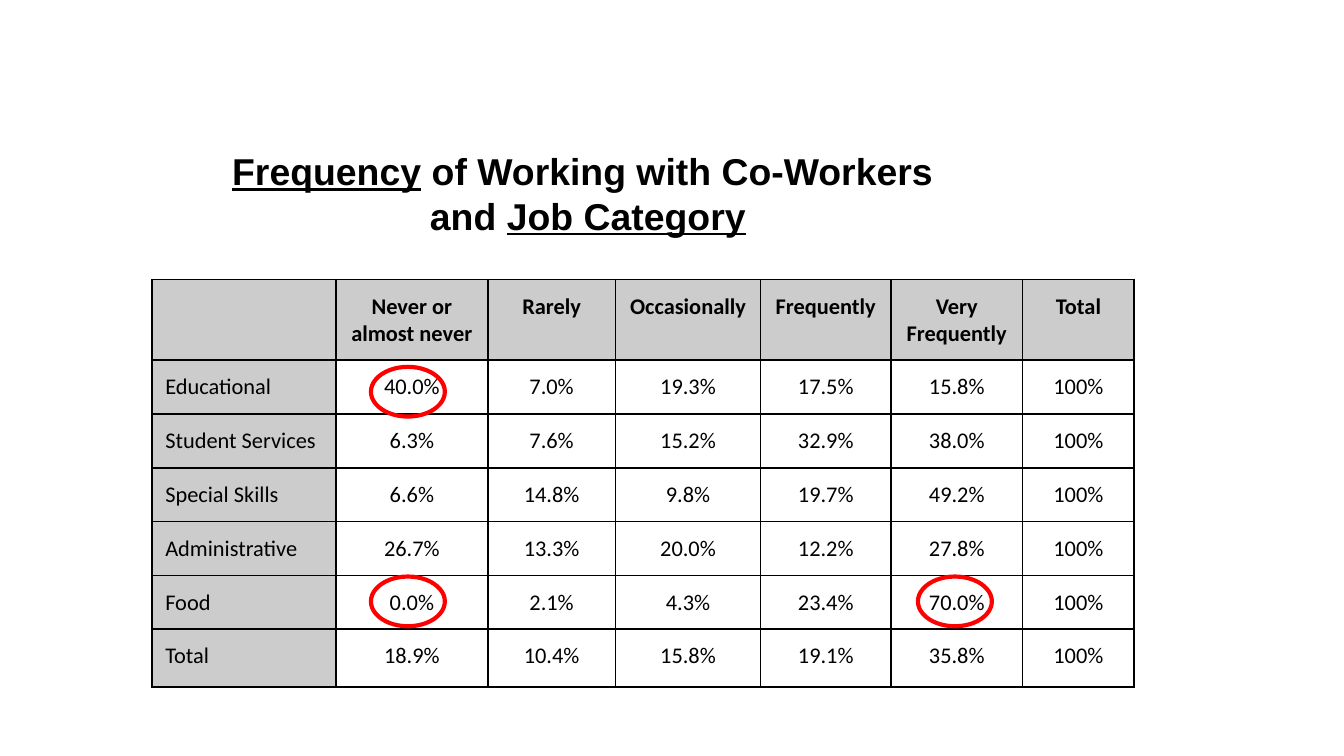
import pptx
import pptx.util
import pptx.dml.color
import pptx.enum.shapes
import pptx.enum.text
import pptx.oxml
import pptx.oxml.ns

Inches, Pt = pptx.util.Inches, pptx.util.Pt
ALIGN = pptx.enum.text.PP_ALIGN
ANCHOR = pptx.enum.text.MSO_ANCHOR

TITLE = [
    [("Frequency", True), (" of Working with Co-Workers ", False)],
    [("and ", False), ("Job Category", True)],
]
HEADS = ["", "Never or almost never", "Rarely", "Occasionally ",
         "Frequently", "Very Frequently", "Total"]
ROWS = [
    ["Educational", "40.0%", "7.0%", "19.3%", "17.5%", "15.8%", "100%"],
    ["Student Services", "6.3%", "7.6%", "15.2%", "32.9%", "38.0%", "100%"],
    ["Special Skills", "6.6%", "14.8%", "9.8%", "19.7%", "49.2%", "100%"],
    ["Administrative", "26.7%", "13.3%", "20.0%", "12.2%", "27.8%", "100%"],
    ["Food", "0.0%", "2.1%", "4.3%", "23.4%", "70.0%", "100%"],
    ["Total", "18.9%", "10.4%", "15.8%", "19.1%", "35.8%", "100%"],
]
WIDTHS = [1.37, 1.13, 0.95, 1.08, 0.97, 0.98, 0.83]
HEIGHTS = [0.6, 0.37, 0.36, 0.37, 0.39, 0.25, 0.43]
LEFT, TOP = 1.13, 2.08
RINGS = [(2.76, 2.73), (2.76, 4.29), (6.83, 4.29)]
RING = (0.55, 0.37)
BLACK, GRAY, RED = "000000", "CCCCCC", "FF0000"


def color(code):
    return pptx.dml.color.RGBColor.from_string(code)


def style(font, name, size, bold):
    font.name, font.size, font.bold = name, Pt(size), bold
    font.color.rgb = color(BLACK)


def add_title(slide):
    box = slide.shapes.add_textbox(
        Inches(-0.39), Inches(1.25), Inches(9.53), Inches(0.37))
    frame = box.text_frame
    frame.word_wrap = True
    frame.vertical_anchor = ANCHOR.MIDDLE
    para = frame.paragraphs[0]
    para.alignment = ALIGN.CENTER
    for n, line in enumerate(TITLE):
        if n:
            para.add_line_break()
        for text, under in line:
            run = para.add_run()
            run.text = text
            style(run.font, "Arial", 20, True)
            run.font.underline = under


def add_edges(cell):
    props = cell._tc.get_or_add_tcPr()
    space = pptx.oxml.ns.nsdecls("a")
    for n, side in enumerate(("lnL", "lnR", "lnT", "lnB")):
        props.insert(n, pptx.oxml.parse_xml(
            f'<a:{side} {space} w="12700"><a:solidFill>'
            f'<a:srgbClr val="{BLACK}"/></a:solidFill></a:{side}>'))


def fill_cell(cell, text, row, col):
    cell.margin_left = cell.margin_right = Inches(0.1)
    cell.margin_top = cell.margin_bottom = Inches(0.1)
    cell.vertical_anchor = ANCHOR.TOP
    cell.text_frame.text = text
    para = cell.text_frame.paragraphs[0]
    para.alignment = ALIGN.CENTER if row == 0 or col else ALIGN.LEFT
    style(para.font, "Calibri", 12, row == 0)
    for run in para.runs:
        style(run.font, "Calibri", 12, row == 0)
    if row == 0 or col == 0:
        cell.fill.solid()
        cell.fill.fore_color.rgb = color(GRAY)
    else:
        cell.fill.background()
    add_edges(cell)


def add_grid(slide):
    table = slide.shapes.add_table(
        len(HEIGHTS), len(WIDTHS), Inches(LEFT), Inches(TOP),
        Inches(sum(WIDTHS)), Inches(sum(HEIGHTS))).table
    table.first_row = table.horz_banding = False
    for col, width in enumerate(WIDTHS):
        table.columns[col].width = Inches(width)
    for row, texts in enumerate([HEADS] + ROWS):
        table.rows[row].height = Inches(HEIGHTS[row])
        for col, text in enumerate(texts):
            fill_cell(table.cell(row, col), text, row, col)


def add_rings(slide):
    for place in RINGS:
        ring = slide.shapes.add_shape(
            pptx.enum.shapes.MSO_SHAPE.OVAL, *map(Inches, place + RING))
        ring.shadow.inherit = False
        ring.fill.background()
        ring.line.color.rgb = color(RED)
        ring.line.width = Pt(2.25)


def main():
    deck = pptx.Presentation()
    deck.slide_width = Inches(10)
    deck.slide_height = deck.slide_width * 9 // 16
    slide = deck.slides.add_slide(deck.slide_layouts[6])
    add_title(slide)
    add_grid(slide)
    add_rings(slide)
    deck.save("out.pptx")


if __name__ == "__main__":
    main()
